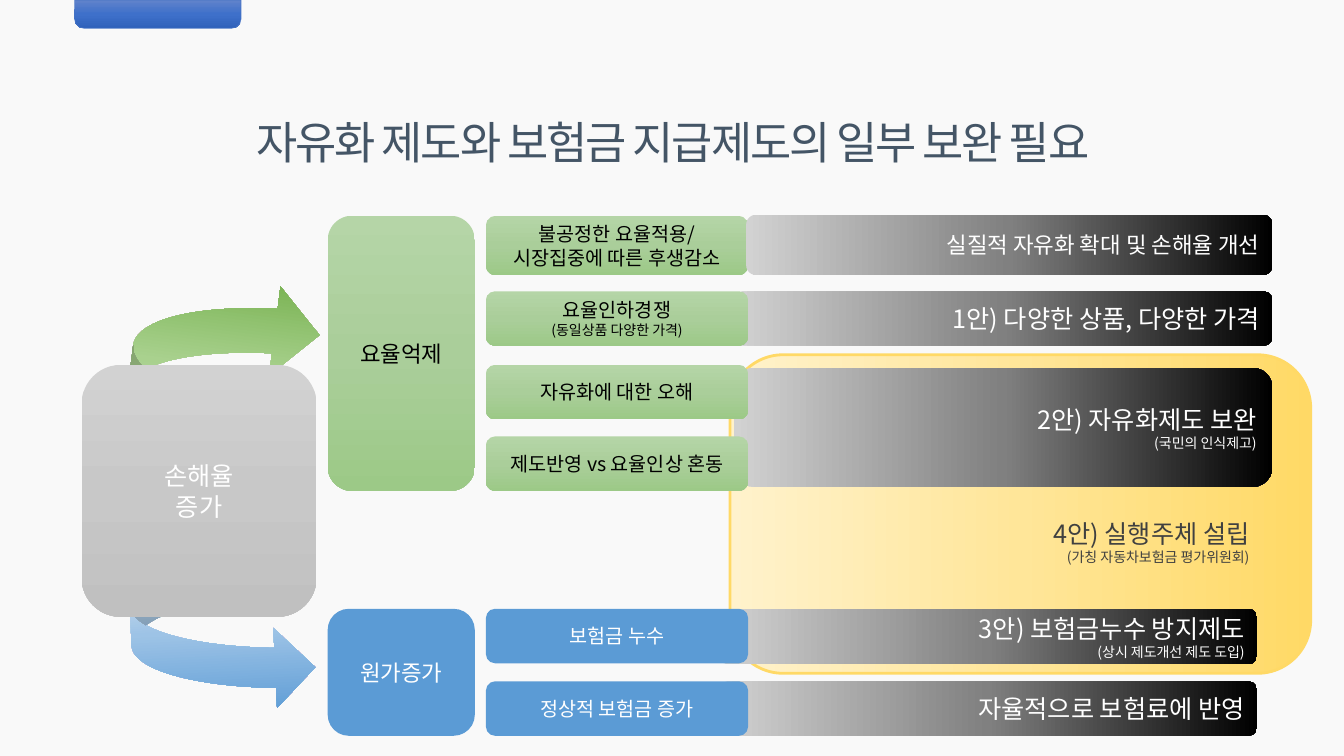
from lxml import etree
from pptx import Presentation
from pptx.dml.color import RGBColor
from pptx.enum.shapes import MSO_SHAPE
from pptx.enum.text import MSO_ANCHOR, PP_ALIGN
from pptx.oxml.ns import qn
from pptx.util import Inches, Pt

FONT = "Noto Sans CJK KR"
COLORS = {"background": "F9F9F9", "title": "445566", "white": "FFFFFF", "black": "000000",
          "body": "404040", "blue": "5B9BD5", "gold": "FFD966", "tab": "4472C4"}

# Gradients: three evenly spaced stops and a clockwise angle
GRADIENTS = {
    "yellow": (("FFF2CC", "FFE699", "FFD966"), 0),
    "tab": (("6183CB", "3E70CA", "3062BB"), 90),
    "dark": (("D2D2D2", "808080", "000000"), 0),
    "green": (("B5D5A7", "AACE9A", "9CC987"), 90),
    "gray": (("D2D2D2", "C8C8C8", "C0C0C0"), 90),
    "blue arrow": (("F2F2F2", "9DC3E6", "5B9BD5"), 90),
    "green arrow": (("D2D2D2", "A9D18E", "70AD47"), 90),
}

# Content: lines are (text, size)
TITLE = [("자유화 제도와 보험금 지급제도의 일부 보완 필요", 32)]
PROBLEM = [("손해율", 18), ("증가", 18)]
AGENCY = [("4안) 실행주체 설립", 18), ("(가칭 자동차보험금 평가위원회)", 10)]
CAUSES = [  # first row, last row, fill, text colour, lines
    (0, 3, "green", "black", [("요율억제", 16)]),
    (4, 5, "blue", "white", [("원가증가", 16)]),
]
REASONS = [  # row, fill, text colour, lines
    (1, "green", "black", [("요율인하경쟁", 14), ("(동일상품 다양한 가격)", 10)]),
    (2, "green", "black", [("자유화에 대한 오해", 14)]),
    (3, "green", "black", [("제도반영 vs 요율인상 혼동", 14)]),
    (5, "blue", "white", [("정상적 보험금 증가", 14)]),
    (4, "blue", "white", [("보험금 누수", 14)]),
    (0, "green", "black", [("불공정한 요율적용/", 14), ("시장집중에 따른 후생감소", 14)]),
]
REMEDIES = [  # column, top, height, lines
    ("lower remedy", 6.04, 0.55, [("3안) 보험금누수 방지제도", 18), ("(상시 제도개선 제도 도입)", 10)]),
    ("lower remedy", 6.76, 0.54, [("자율적으로 보험료에 반영", 18)]),
    ("upper remedy", 3.65, 1.18, [("2안) 자유화제도 보완", 18), ("(국민의 인식제고)", 10)]),
    ("upper remedy", 2.89, 0.54, [("1안) 다양한 상품, 다양한 가격", 18)]),
]
TOP_REMEDY = [("실질적 자유화 확대 및 손해율 개선", 16)]

# Grid: columns are (left, width), rows are (top, height)
COLUMNS = {"problem": (0.81, 2.33), "cause": (3.25, 1.46), "reason": (4.82, 2.6),
           "upper remedy": (7.28, 5.34), "lower remedy": (7.13, 5.34),
           "top remedy": (7.4, 5.22)}
ROWS = [(2.14, 0.59), (2.89, 0.54), (3.62, 0.54), (4.33, 0.54), (6.04, 0.54), (6.76, 0.54)]

deck = Presentation()
deck.slide_width, deck.slide_height = Inches(13.33), Inches(7.5)
slide = deck.slides.add_slide(deck.slide_layouts[6])
slide.background.fill.solid()
slide.background.fill.fore_color.rgb = RGBColor.from_string(COLORS["background"])


def paint(shape, fill):
    if fill not in GRADIENTS:
        shape.fill.solid()
        shape.fill.fore_color.rgb = RGBColor.from_string(COLORS[fill])
        return
    stops, angle = GRADIENTS[fill]
    shape.fill.gradient()
    shape.fill.gradient_angle = (360 - angle) % 360
    stop_list = shape.element.spPr.find(".//" + qn("a:gsLst"))
    for old_stop in list(stop_list):
        stop_list.remove(old_stop)
    for index, color in enumerate(stops):
        stop = etree.SubElement(stop_list, qn("a:gs"), pos=str(index * 50000))
        etree.SubElement(stop, qn("a:srgbClr"), val=color)


def write(shape, lines, color, align, anchor=MSO_ANCHOR.MIDDLE):
    frame = shape.text_frame
    frame.word_wrap = True
    frame.vertical_anchor = anchor
    frame.text = "\n".join(text for text, _ in lines)
    for paragraph, (_, size) in zip(frame.paragraphs, lines):
        paragraph.alignment = align
        font = paragraph.runs[0].font
        font.size, font.name = Pt(size), FONT
        font.color.rgb = RGBColor.from_string(COLORS[color])
        east_asian = etree.SubElement(font._element, qn("a:ea"))
        east_asian.set("typeface", FONT)


def block(column, row, fill, lines=(), color="white", align=PP_ALIGN.CENTER,
          kind=MSO_SHAPE.ROUNDED_RECTANGLE, outline=None):
    (left, width), (top, height) = column, row
    shape = slide.shapes.add_shape(kind, Inches(left), Inches(top), Inches(width), Inches(height))
    shape.shadow.inherit = False
    paint(shape, fill)
    if outline:
        shape.line.color.rgb = RGBColor.from_string(COLORS[outline[0]])
        shape.line.width = Pt(outline[1])
    else:
        shape.line.fill.background()
    if lines:
        write(shape, lines, color, align)
    return shape


# Yellow backdrop and top tab
block((7.24, 5.76), (3.52, 3.16), "yellow", outline=("gold", 2))
tab = block((0.74, 1.65), (0, 0.28), "tab", kind=MSO_SHAPE.ROUND_2_SAME_RECTANGLE,
            outline=("tab", 0.5))
tab.adjustments[0], tab.adjustments[1] = 0, 0.33

# Title
title = block((0.95, 11.45), (1.08, 0.64), "background", TITLE, "title", kind=MSO_SHAPE.RECTANGLE)
title.text_frame.margin_top = title.text_frame.margin_bottom = 0
title.text_frame.paragraphs[0].runs[0].font._element.set("spc", "-150")

# Remedies, then the reasons and causes over their left ends
for column, top, height, lines in REMEDIES:
    block(COLUMNS[column], (top, height), "dark", lines, align=PP_ALIGN.RIGHT)
for row, fill, color, lines in REASONS:
    block(COLUMNS["reason"], ROWS[row], fill, lines, color)
for first, last, fill, color, lines in CAUSES:
    top = ROWS[first][0]
    block(COLUMNS["cause"], (top, sum(ROWS[last]) - top), fill, lines, color)
block(COLUMNS["top remedy"], (2.13, 0.6), "dark", TOP_REMEDY, align=PP_ALIGN.RIGHT)

# Curved arrows behind the problem box
lower_arrow = block((1.3, 1.81), (5.47, 1.59), "blue arrow", kind=MSO_SHAPE.CURVED_RIGHT_ARROW)
lower_arrow.rotation = 357.3
upper_arrow = block((1.3, 1.82), (2.76, 1.78), "green arrow", kind=MSO_SHAPE.CURVED_LEFT_ARROW)
upper_arrow.rotation = 187.3
block(COLUMNS["problem"], (3.62, 2.5), "gray", PROBLEM)

# Agency proposal on the yellow backdrop
agency = slide.shapes.add_textbox(Inches(10.25), Inches(5.09), Inches(2.24), Inches(0.57))
write(agency, AGENCY, "body", PP_ALIGN.RIGHT, MSO_ANCHOR.TOP)

deck.save("out.pptx")
